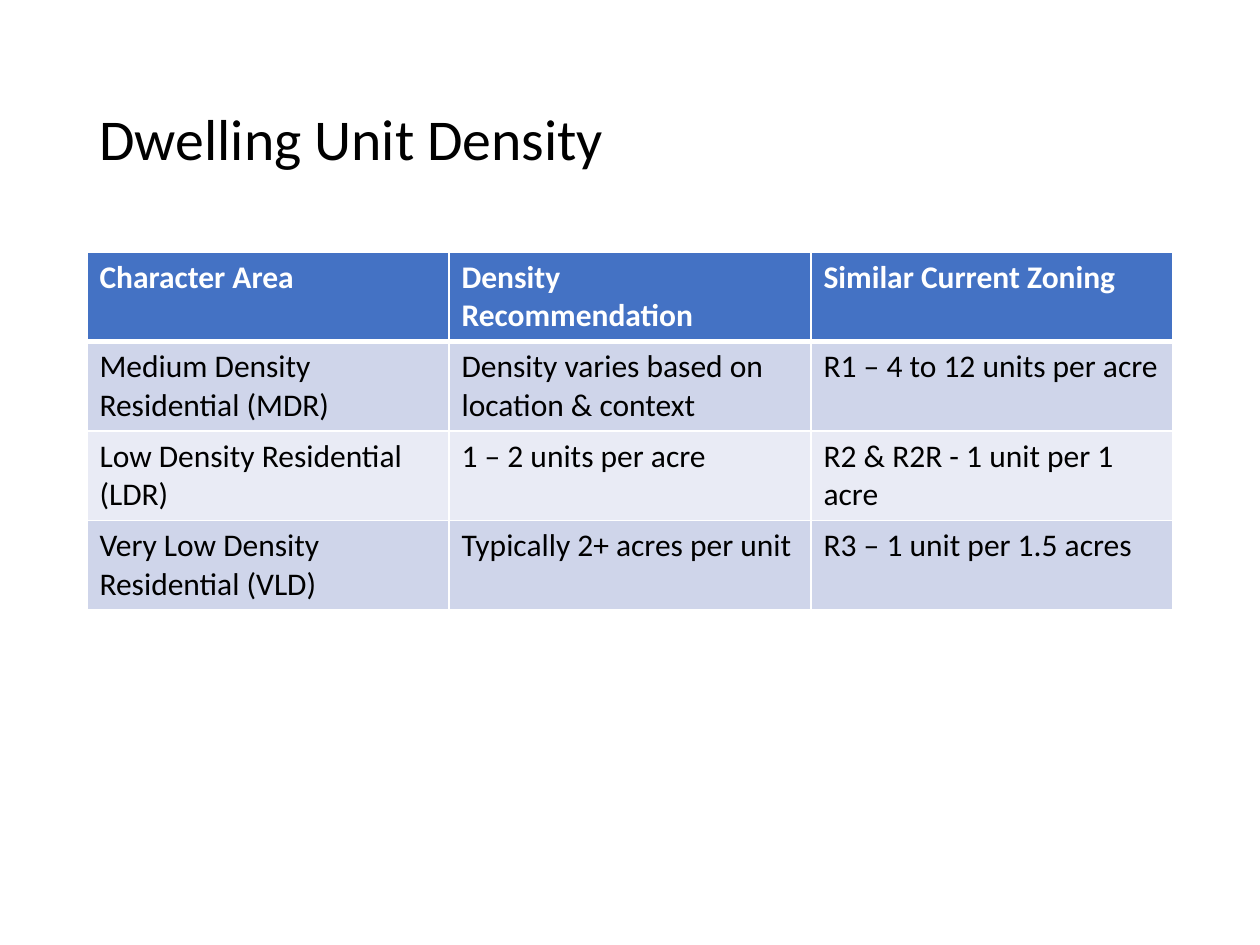
from lxml import etree
from pptx import Presentation
from pptx.dml.color import RGBColor
from pptx.enum.text import MSO_ANCHOR
from pptx.oxml.ns import qn
from pptx.util import Inches, Pt

MIDDLE = MSO_ANCHOR.MIDDLE
BLACK = RGBColor(0x00, 0x00, 0x00)
WHITE = RGBColor(0xFF, 0xFF, 0xFF)
HEADER_BLUE = RGBColor(0x44, 0x72, 0xC4)
BAND_DARK = RGBColor(0xCF, 0xD5, 0xEA)
BAND_LIGHT = RGBColor(0xE9, 0xEB, 0xF5)

DENSITIES = [
    ("Character Area", "Density Recommendation", "Similar Current Zoning"),
    ("Medium Density Residential (MDR)", "Density varies based on location & context",
     "R1 – 4 to 12 units per acre"),
    ("Low Density Residential (LDR)", "1 – 2 units per acre", "R2 & R2R - 1 unit per 1 acre"),
    ("Very Low Density Residential (VLD)", "Typically 2+ acres per unit",
     "R3 – 1 unit per 1.5 acres"),
]


def write(frame, text, size=18, color=BLACK, bold=False, spacing=1.0):
    paragraph = frame.paragraphs[0]
    paragraph.line_spacing = spacing
    run = paragraph.add_run()
    run.text = text
    run.font.name = "Calibri"
    run.font.size = Pt(size)
    run.font.bold = bold
    run.font.color.rgb = color


def add_border(cell, side, width):
    line = etree.SubElement(cell._tc.get_or_add_tcPr(), qn(f"a:{side}"), w=str(Pt(width)))
    fill = etree.SubElement(line, qn("a:solidFill"))
    etree.SubElement(fill, qn("a:srgbClr"), val=str(WHITE))


prs = Presentation()
prs.slide_width = Inches(10)
prs.slide_height = Inches(7.5)
slide = prs.slides.add_slide(prs.slide_layouts[6])

title = slide.shapes.add_textbox(Inches(0.69), Inches(0.4), Inches(8.62), Inches(1.45)).text_frame
title.word_wrap = True
title.vertical_anchor = MIDDLE
write(title, "Dwelling Unit Density", size=33, spacing=0.9)

density_table = slide.shapes.add_table(
    len(DENSITIES), len(DENSITIES[0]), Inches(0.69), Inches(2), Inches(8.62), Inches(2.84)
).table

for r, labels in enumerate(DENSITIES):
    is_header = r == 0
    band = HEADER_BLUE if is_header else BAND_DARK if r % 2 else BAND_LIGHT
    for c, label in enumerate(labels):
        cell = density_table.cell(r, c)
        write(cell.text_frame, label, color=WHITE if is_header else BLACK, bold=is_header)
        add_border(cell, "lnL", 1)
        add_border(cell, "lnR", 1)
        add_border(cell, "lnT", 3 if r == 1 else 1)
        add_border(cell, "lnB", 3 if is_header else 1)
        cell.fill.solid()
        cell.fill.fore_color.rgb = band

prs.save("out.pptx")
